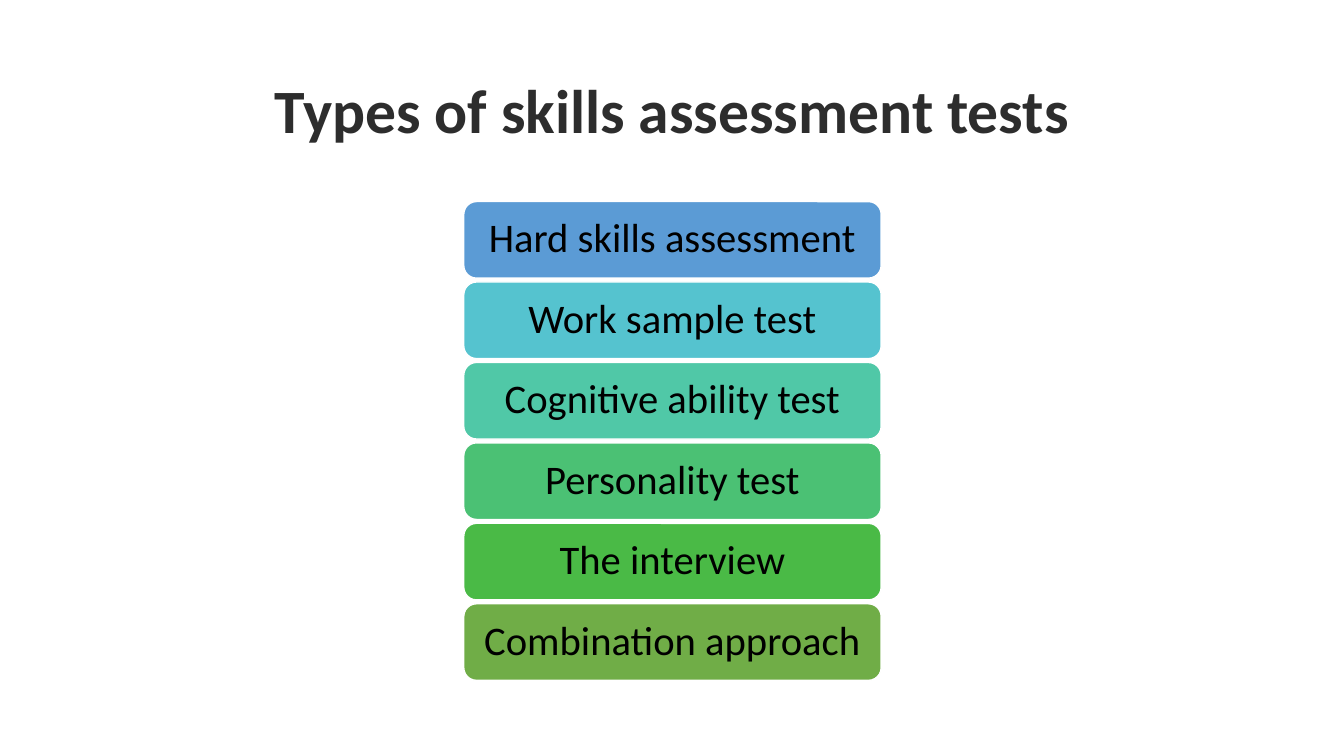
from pptx import Presentation
from pptx.dml.color import RGBColor
from pptx.enum.shapes import MSO_SHAPE
from pptx.enum.text import MSO_ANCHOR, PP_ALIGN
from pptx.util import Inches, Pt

FONT = "Calibri"
WHITE = RGBColor(0xFF, 0xFF, 0xFF)
BLACK = RGBColor(0x00, 0x00, 0x00)
CHARCOAL = RGBColor(0x2D, 0x2D, 0x2D)
TESTS = [
    ("Hard skills assessment", RGBColor(0x5B, 0x9B, 0xD5)),
    ("Work sample test", RGBColor(0x55, 0xC3, 0xCF)),
    ("Cognitive ability test", RGBColor(0x50, 0xC8, 0xA7)),
    ("Personality test", RGBColor(0x4B, 0xC1, 0x74)),
    ("The interview", RGBColor(0x4A, 0xBA, 0x46)),
    ("Combination approach", RGBColor(0x70, 0xAD, 0x47)),
]
TITLE_BOX = (0.92, 0.4, 11.5, 1.45)
STACK_BOX = (4.6, 2, 4.14, 4.75)
GAP_SHARE = 0.05


def format_text(shape, text, size, color, bold=False):
    frame = shape.text_frame
    frame.text = text
    frame.word_wrap = True
    frame.vertical_anchor = MSO_ANCHOR.MIDDLE
    para = frame.paragraphs[0]
    para.alignment = PP_ALIGN.CENTER
    para.line_spacing = 0.9
    para.font.name = FONT
    para.font.size = Pt(size)
    para.font.bold = bold
    para.font.color.rgb = color


def place_title(page, box, text):
    title = page.shapes.title
    title.left, title.top, title.width, title.height = map(Inches, box)
    format_text(title, text, 44, CHARCOAL, bold=True)


def add_test_stack(page, box, tests):
    left, top, width, height = box
    bar_height = height / (len(tests) + GAP_SHARE * (len(tests) - 1))
    pitch = bar_height * (1 + GAP_SHARE)
    for row, (label, color) in enumerate(tests):
        bar = page.shapes.add_shape(
            MSO_SHAPE.ROUNDED_RECTANGLE,
            Inches(left), Inches(top + row * pitch),
            Inches(width), Inches(bar_height),
        )
        bar.shadow.inherit = False
        bar.fill.solid()
        bar.fill.fore_color.rgb = color
        bar.line.color.rgb = WHITE
        bar.line.width = Pt(1)
        frame = bar.text_frame
        frame.margin_left = frame.margin_right = Inches(0.12)
        frame.margin_top = frame.margin_bottom = Inches(0.06)
        format_text(bar, label, 29, BLACK)


def main():
    deck = Presentation()
    deck.slide_width, deck.slide_height = Inches(13.33), Inches(7.5)
    page = deck.slides.add_slide(deck.slide_layouts.get_by_name("Title Only"))
    place_title(page, TITLE_BOX, "Types of skills assessment tests")
    add_test_stack(page, STACK_BOX, TESTS)
    deck.save("out.pptx")


if __name__ == "__main__":
    main()
